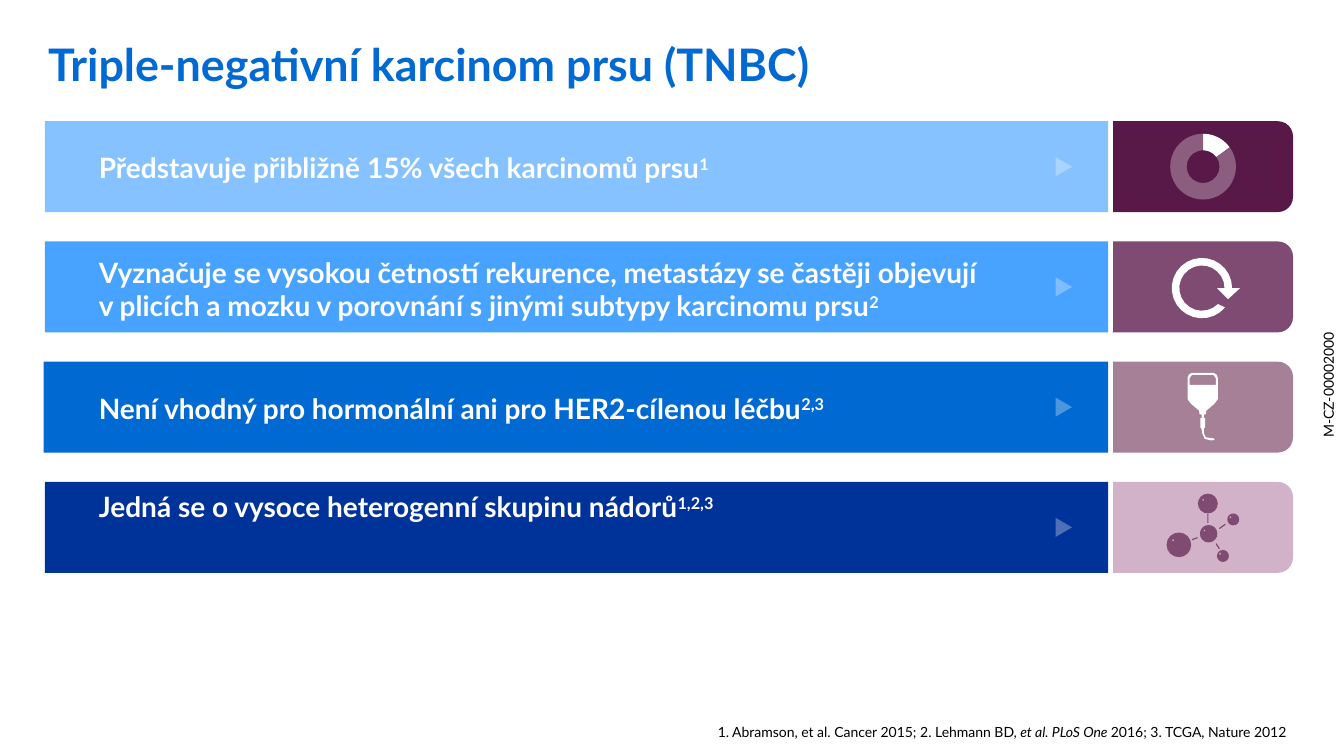
from dataclasses import dataclass
from math import cos, hypot, radians, sin

from lxml.etree import SubElement
from pptx import Presentation
from pptx.chart.data import CategoryChartData
from pptx.dml.color import RGBColor
from pptx.enum.chart import XL_CHART_TYPE as ChartType
from pptx.enum.shapes import MSO_CONNECTOR as Connector, MSO_SHAPE as Preset
from pptx.enum.text import MSO_ANCHOR as Anchor, MSO_AUTO_SIZE as AutoSize, PP_ALIGN as Align
from pptx.oxml.ns import qn
from pptx.util import Cm, Pt

FONT = "Lato"
WHITE, BLACK, BLUE, PLUM = "FFFFFF", "000000", "0069D2", "7F4B72"
FIRST_ROW, ROW_PITCH, ROW_HEIGHT = 4.2, 3.03, 2.29  # first row centre, step, height
BAND_RIGHT, CARD_CENTER, CARD_WIDTH = 27.93, 30.31, 4.55

Point = tuple[float, float]


@dataclass
class Row:
    lines: list[str]
    references: str
    band: str
    card: str
    text_width: float
    band_left: float = 1.13
    text_shift: float = 0.02


@dataclass
class Atom:
    x: float
    y: float
    radius: float


ROWS = [
    Row(["Představuje přibližně 15% všech karcinomů prsu"], "1", "85C2FF", "591948", 17.27),
    Row(["Vyznačuje se vysokou četností rekurence, metastázy se častěji objevují",
         "v plicích a mozku v porovnání s jinými subtypy karcinomu prsu"],
        "2", "47A3FF", PLUM, 24.16, text_shift=0.05),
    Row(["Není vhodný pro hormonální ani pro HER2-cílenou léčbu"], "2,3", BLUE, "A68097",
        19.71, band_left=1.1),
    Row(["Jedná se o vysoce heterogenní skupinu nádorů"], "1,2,3", "003399", "D1B2C9",
        17.04, text_shift=-0.53),
]
ATOMS = [Atom(-0.75, 0.28, 0.31), Atom(0, 0, 0.22), Atom(-0.02, -0.76, 0.25),
         Atom(0.62, -0.36, 0.15), Atom(0.36, 0.56, 0.15)]
BONDS = [((0.27, -0.13), (0.42, -0.24)), ((-0.42, 0.15), (-0.28, 0.1)),
         ((0.19, 0.25), (0.27, 0.38))]
BOND_WIDTH = 0.03


def colour(value: str) -> RGBColor:
    return RGBColor.from_string(value)


def add_run(paragraph, text: str, *, size: float, color: str, bold: bool = False,
            italic: bool = False, superscript: bool = False) -> None:
    run = paragraph.add_run()
    run.text = text
    font = run.font
    font.name, font.size, font.bold, font.italic = FONT, Pt(size), bold, italic
    font.color.rgb = colour(color)
    if superscript:
        run._r.get_or_add_rPr().set("baseline", "30000")


def place(shape, left: float, top: float, width: float, height: float) -> None:
    shape.left, shape.top, shape.width, shape.height = map(Cm, (left, top, width, height))


def paint(shape, fill: str, opacity: int = 100) -> None:
    shape.shadow.inherit = False
    shape.fill.solid()
    shape.fill.fore_color.rgb = colour(fill)
    shape.line.fill.background()
    if opacity < 100:
        target = shape._element.spPr.find(f"{qn('a:solidFill')}/{qn('a:srgbClr')}")
        SubElement(target, qn("a:alpha")).set("val", str(opacity * 1000))


def add_block(canvas, preset, center: Point, width: float, height: float, fill: str,
              rotation: float = 0, opacity: int = 100) -> None:
    x, y = center
    shape = canvas.shapes.add_shape(preset, Cm(x - width / 2), Cm(y - height / 2),
                                    Cm(width), Cm(height))
    shape.rotation = rotation
    paint(shape, fill, opacity)


def add_divider(slide, x: float, top: float, bottom: float) -> None:
    line = slide.shapes.add_connector(Connector.STRAIGHT, Cm(x), Cm(top), Cm(x), Cm(bottom))
    line.line.color.rgb = colour(WHITE)
    line.line.width = Pt(3)
    SubElement(line._element.spPr, qn("a:effectLst"))


def add_outline(canvas, origin: Point, contours: list[list[Point]], fill: str) -> None:
    placed = [[(Cm(origin[0] + x), Cm(origin[1] + y)) for x, y in contour]
              for contour in contours]
    builder = canvas.shapes.build_freeform(*placed[0][0], scale=1.0)
    for index, contour in enumerate(placed):
        if index:
            builder.move_to(*contour[0])
        builder.add_line_segments(contour[1:], close=True)
    paint(builder.convert_to_shape(), fill)


def arc(radius: float, start: float, end: float, steps: int,
        center: Point = (0, 0)) -> list[Point]:
    angles = [radians(start + (end - start) * step / steps) for step in range(steps + 1)]
    return [(center[0] + radius * cos(angle), center[1] + radius * sin(angle))
            for angle in angles]


def circle(radius: float, steps: int, center: Point = (0, 0)) -> list[Point]:
    return arc(radius, 0, 360, steps, center)[:-1]


def add_row(slide, row: Row, y: float) -> None:
    band_width = BAND_RIGHT - row.band_left
    add_block(slide, Preset.RECTANGLE, (row.band_left + band_width / 2, y),
              band_width, ROW_HEIGHT, row.band)
    add_block(slide, Preset.ROUND_2_SAME_RECTANGLE, (CARD_CENTER, y),
              ROW_HEIGHT, CARD_WIDTH, row.card, rotation=90)
    add_divider(slide, 27.99, y - ROW_HEIGHT / 2, y + ROW_HEIGHT / 2)
    add_block(slide, Preset.ISOSCELES_TRIANGLE, (26.81, y), 0.48, 0.41, WHITE,
              rotation=90, opacity=30)
    height = 0.25 + 0.85 * len(row.lines)
    box = slide.shapes.add_textbox(Cm(2.24), Cm(y + row.text_shift - height / 2),
                                   Cm(row.text_width), Cm(height))
    frame = box.text_frame
    frame.word_wrap = False
    frame.auto_size = AutoSize.SHAPE_TO_FIT_TEXT
    frame.vertical_anchor = Anchor.MIDDLE
    for index, line in enumerate(row.lines):
        paragraph = frame.add_paragraph() if index else frame.paragraphs[0]
        add_run(paragraph, line, size=20, color=WHITE, bold=True)
    add_run(paragraph, row.references, size=20, color=WHITE, bold=True, superscript=True)


def add_share_chart(slide) -> None:
    data = CategoryChartData()
    data.categories = ["1", "2"]
    data.add_series("Series 1", (15, 85))
    chart = slide.shapes.add_chart(ChartType.DOUGHNUT, Cm(28.58), Cm(3.02), Cm(3.48),
                                   Cm(2.36), data).chart
    chart.has_legend = chart.has_title = False
    chart.font.name, chart.font.size = FONT, Pt(10)
    chart.font.color.rgb = colour(BLACK)
    plot = chart.plots[0]
    plot.vary_by_categories = False
    plot._element.find(qn("c:holeSize")).set("val", "45")
    for index, fill in enumerate((WHITE, "8B5E7F")):
        point = plot.series[0].points[index].format
        point.fill.solid()
        point.fill.fore_color.rgb = colour(fill)
        point.line.fill.background()


def add_recurrence_arrow(slide) -> None:
    head = [(0.38, 0), (0.66, 0.28), (0.96, 0)]
    add_outline(slide, (30.29, 7.26),
                [head + arc(0.76, 0, -320, 24) + arc(0.57, -315, 0, 20)], WHITE)


def add_infusion_bag(slide) -> None:
    side = [(0.28, 0), (0.35, 0.04), (0.38, 0.12), (0.38, 0.66), (0.3, 0.77),
            (0.09, 0.95), (0.08, 1.04), (0.03, 1.04), (0.03, 1.14), (0.06, 1.14),
            (0.06, 1.37), (0.03, 1.4)]
    tube = [(0.03, 1.52), (0.08, 1.62), (0.28, 1.65), (0.3, 1.68), (0.22, 1.7),
            (0.05, 1.66), (-0.01, 1.52)]
    left_side = [(-x, y) for x, y in reversed(side)]
    window = [(-0.33, 0.3), (0.33, 0.3), (0.33, 0.13), (0.27, 0.05), (-0.27, 0.05),
              (-0.33, 0.13)]
    add_outline(slide, (CARD_CENTER, 9.4), [side + tube + left_side, window], WHITE)


def add_molecule(slide) -> None:
    group = slide.shapes.add_group_shape()
    x, y = 30.46, 13.45
    add_block(group, Preset.RECTANGLE, (x - 0.02, y - 0.38), BOND_WIDTH, 0.23, PLUM)
    for (x1, y1), (x2, y2) in BONDS:
        half = BOND_WIDTH / 2 / hypot(x2 - x1, y2 - y1)
        dx, dy = (y1 - y2) * half, (x2 - x1) * half
        add_outline(group, (x, y), [[(x1 + dx, y1 + dy), (x2 + dx, y2 + dy),
                                     (x2 - dx, y2 - dy), (x1 - dx, y1 - dy)]], PLUM)
    for atom in ATOMS:
        glint = (-atom.radius * 0.47, -atom.radius * 0.37)
        add_outline(group, (x + atom.x, y + atom.y),
                    [circle(atom.radius, 16), circle(0.03, 4, glint)[::-1]], PLUM)


def main() -> None:
    presentation = Presentation()
    presentation.slide_width, presentation.slide_height = Cm(33.87), Cm(19.05)
    slide = presentation.slides.add_slide(presentation.slide_layouts[1])

    # Title
    title = slide.shapes.title
    place(title, 1.21, 0.53, 27.86, 1.78)
    frame = title.text_frame
    frame.margin_left = frame.margin_right = frame.margin_top = frame.margin_bottom = 0
    frame.vertical_anchor, frame.auto_size = Anchor.BOTTOM, AutoSize.NONE
    paragraph = frame.paragraphs[0]
    paragraph.alignment, paragraph.line_spacing = Align.LEFT, 0.9
    add_run(paragraph, "Triple-negativní karcinom prsu (TNBC)", size=32, color=BLUE, bold=True)

    # Statements and their icons
    for index, row in enumerate(ROWS):
        add_row(slide, row, FIRST_ROW + index * ROW_PITCH)
    for add_icon in (add_share_chart, add_recurrence_arrow, add_infusion_bag, add_molecule):
        add_icon(slide)

    # References
    references = slide.placeholders[1]
    place(references, 17.02, 17.51, 15.65, 1.27)
    frame = references.text_frame
    frame.vertical_anchor, frame.auto_size = Anchor.BOTTOM, AutoSize.NONE
    paragraph = frame.paragraphs[0]
    properties = paragraph._p.get_or_add_pPr()
    properties.set("marL", "0")
    properties.set("indent", "0")
    SubElement(properties, qn("a:buNone"))
    paragraph.alignment, paragraph.space_before = Align.RIGHT, Pt(0)
    add_run(paragraph, "1. Abramson, et al. Cancer 2015; 2. Lehmann BD, ", size=10, color=BLACK)
    add_run(paragraph, "et al. PLoS One ", size=10, color=BLACK, italic=True)
    add_run(paragraph, "2016; 3. TCGA, Nature 2012", size=10, color=BLACK)

    # Document code along the right edge
    code = slide.shapes.add_textbox(Cm(31.06), Cm(8.51), Cm(4.85), Cm(0.69))
    code.rotation = 270
    code.text_frame.word_wrap = True
    add_run(code.text_frame.paragraphs[0], "M-CZ-00002000", size=10, color=BLACK)

    presentation.save("out.pptx")


if __name__ == "__main__":
    main()
